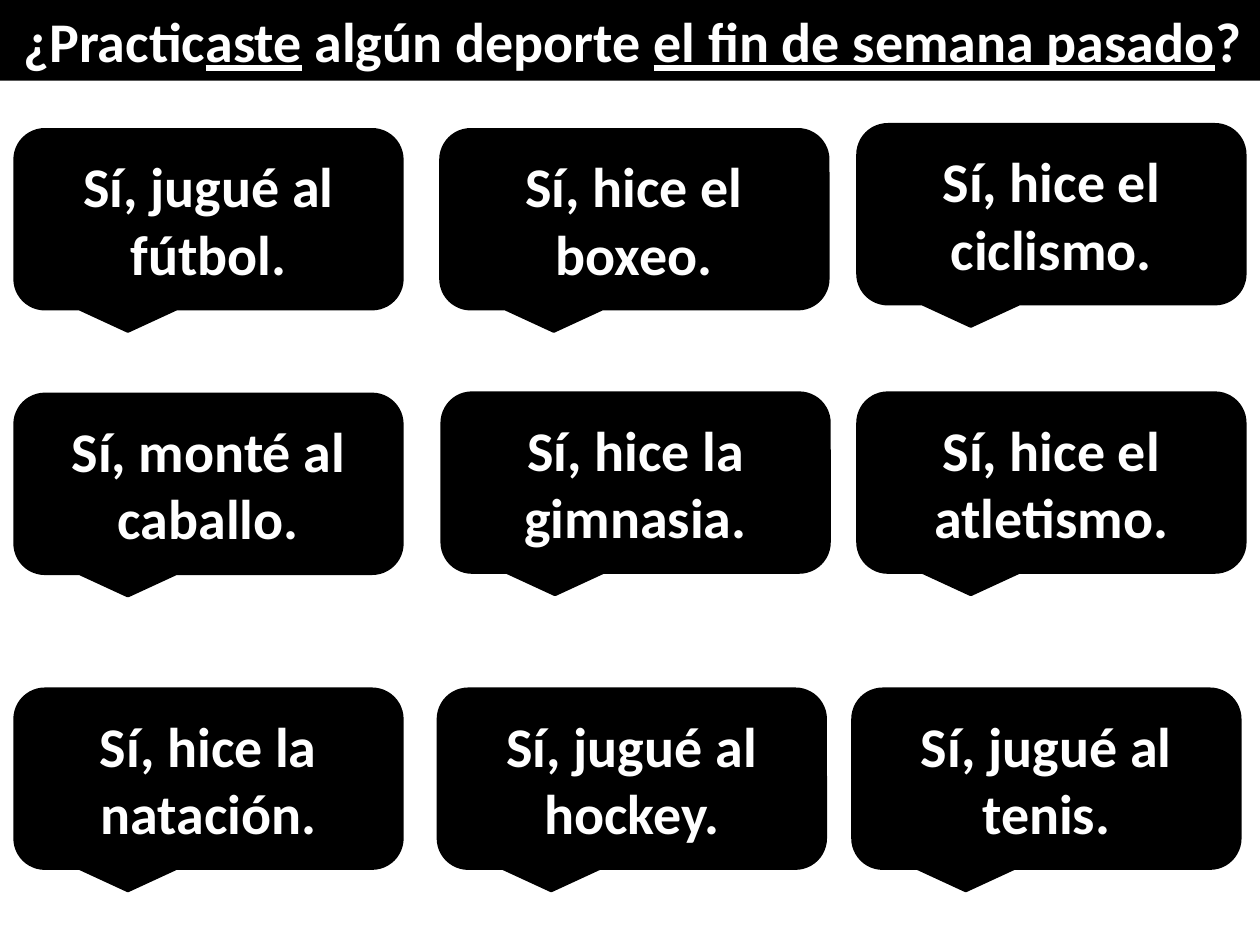
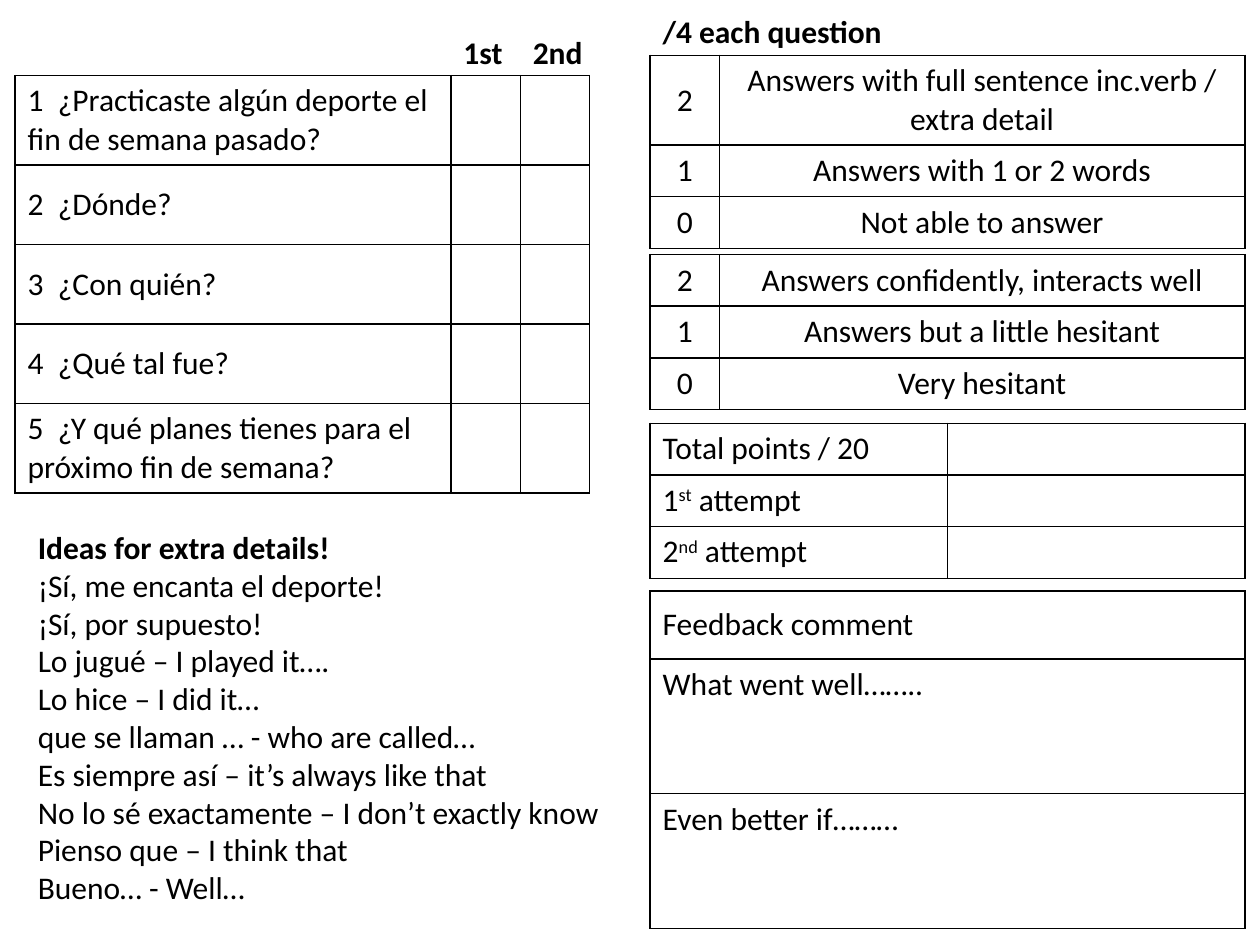
from lxml import etree
from pptx import Presentation
from pptx.dml.color import RGBColor
from pptx.enum.shapes import MSO_SHAPE
from pptx.enum.text import MSO_ANCHOR, MSO_AUTO_SIZE, PP_ALIGN
from pptx.oxml.ns import qn
from pptx.util import Inches, Pt

COLOURS = {"ink": "000000", "paper": "FFFFFF"}
FONT = "Calibri"
CALLOUT = MSO_SHAPE.ROUNDED_RECTANGULAR_CALLOUT
TOP, MIDDLE = MSO_ANCHOR.TOP, MSO_ANCHOR.MIDDLE
LEFT, CENTER = PP_ALIGN.LEFT, PP_ALIGN.CENTER
NO_AUTOFIT = MSO_AUTO_SIZE.NONE
TITLE_ONLY, TITLE_AND_CONTENT = 5, 1

HEADLINE = {"size": Pt(32), "bold": True}
BODY = {"size": Pt(18), "bold": False}
LABEL = {"size": Pt(18), "bold": True}
UNDERLINED = {"underline": True}
SUPERSCRIPT = {"baseline": "30000"}

QUESTION = [("¿Practic", {}), ("aste", UNDERLINED), (" algún deporte ", {}),
            ("el fin de semana pasado", UNDERLINED), ("?", {})]
CALLOUT_SIZE = (3.07, 1.42)
ANSWERS = [
    (0.12, 1.03, "Sí, jugué al fútbol."),
    (3.5, 1.03, "Sí, hice el boxeo."),
    (6.81, 0.99, "Sí, hice el ciclismo."),
    (0.12, 3.13, "Sí, monté al caballo."),
    (3.51, 3.12, "Sí, hice la gimnasia."),
    (6.81, 3.12, "Sí, hice el atletismo."),
    (0.12, 5.47, "Sí, hice la natación."),
    (3.48, 5.47, "Sí, jugué al hockey."),
    (6.77, 5.47, "Sí, jugué al tenis."),
]

QUESTIONS = [
    "1  ¿Practicaste algún deporte el fin de semana pasado?",
    "2  ¿Dónde?",
    "3  ¿Con quién?",
    "4  ¿Qué tal fue?",
    "5  ¿Y qué planes tienes para el próximo fin de semana?",
]
CONTENT_MARKS = [
    ("2", "Answers with full sentence inc.verb / extra detail"),
    ("1", "Answers with 1 or 2 words"),
    ("0", "Not able to answer"),
]
FLUENCY_MARKS = [
    ("2", "Answers confidently, interacts well"),
    ("1", "Answers but a little hesitant"),
    ("0", "Very hesitant"),
]
TOTALS = [
    ("Total points / 20", ""),
    ([("1", {}), ("st", SUPERSCRIPT), (" attempt", {})], ""),
    ([("2", {}), ("nd", SUPERSCRIPT), (" attempt", {})], ""),
]
FEEDBACK = ["Feedback comment", "What went well……..", "Even better if………"]
IDEAS_HEADING = "Ideas for extra details!"
IDEAS = [
    "¡Sí, me encanta el deporte!",
    "¡Sí, por supuesto!",
    "Lo jugué – I played it….",
    "Lo hice – I did it…",
    "que se llaman … - who are called…",
    "Es siempre así – it’s always like that",
    "No lo sé exactamente – I don’t exactly know",
    "Pienso que – I think that",
    "Bueno… - Well…",
]


def colour(name):
    return RGBColor.from_string(COLOURS[name])


def set_values(target, values):
    for name, value in values.items():
        setattr(target, name, value)


def write(paragraph, content, style, colour_name="ink", align=LEFT):
    """Fill a paragraph from a string or from (text, format) pairs."""
    paragraph.alignment = align
    runs = [(content, {})] if isinstance(content, str) else content
    for text, extra in runs:
        values = {"name": FONT, **style, **extra}
        baseline = values.pop("baseline", None)
        run = paragraph.add_run()
        run.text = text
        set_values(run.font, values)
        run.font.color.rgb = colour(colour_name)
        if baseline:
            run._r.get_or_add_rPr().set("baseline", baseline)


def place(shape, box):
    names = ("left", "top", "width", "height")
    set_values(shape, dict(zip(names, map(Inches, box))))


def set_frame(shape, anchor):
    set_values(shape.text_frame, {"word_wrap": True, "auto_size": NO_AUTOFIT,
                                  "vertical_anchor": anchor})


def fill(target, colour_name):
    target.fill.solid()
    target.fill.fore_color.rgb = colour(colour_name)


def add_question_band(slide, box):
    title = slide.shapes.title
    place(title, box)
    fill(title, "ink")
    set_frame(title, TOP)
    write(title.text_frame.paragraphs[0], QUESTION, HEADLINE, "paper", CENTER)


def add_callout(slide, box, answer):
    callout = slide.shapes.add_shape(CALLOUT, *map(Inches, box))
    callout.shadow.inherit = False
    fill(callout, "ink")
    callout.line.color.rgb = colour("ink")
    callout.line.width = Pt(2)
    set_frame(callout, MIDDLE)
    write(callout.text_frame.paragraphs[0], answer, HEADLINE, "paper", CENTER)


def add_label(slide, box, text):
    label = slide.shapes.add_textbox(*map(Inches, box))
    set_frame(label, TOP)
    write(label.text_frame.paragraphs[0], text, LABEL)


def add_borders(cell):
    properties = cell._tc.get_or_add_tcPr()
    for position, side in enumerate(("lnL", "lnR", "lnT", "lnB")):
        line = etree.Element(qn(f"a:{side}"), w=str(Pt(1)))
        solid = etree.SubElement(line, qn("a:solidFill"))
        etree.SubElement(solid, qn("a:srgbClr"), val=COLOURS["ink"])
        properties.insert(position, line)


def add_grid(slide, position, widths, heights, rows, align=LEFT, anchors=None):
    """Add a ruled table; anchors holds one vertical anchor per row."""
    left, top = position
    box = (left, top, sum(widths), sum(heights))
    frame = slide.shapes.add_table(len(heights), len(widths), *map(Inches, box))
    table = frame.table
    set_values(table, {"first_row": False, "horz_banding": False})
    for column, width in zip(table.columns, widths):
        column.width = Inches(width)
    anchors = anchors or [MIDDLE] * len(rows)
    for row, height, contents, anchor in zip(table.rows, heights, rows, anchors):
        row.height = Inches(height)
        for cell, content in zip(row.cells, contents):
            fill(cell, "paper")
            add_borders(cell)
            cell.vertical_anchor = anchor
            if content:
                write(cell.text_frame.paragraphs[0], content, BODY, align=align)


def add_ideas(slide, box):
    ideas = slide.placeholders[1]
    place(ideas, box)
    set_frame(ideas, TOP)
    frame = ideas.text_frame
    for index, line in enumerate([IDEAS_HEADING, *IDEAS]):
        paragraph = frame.add_paragraph() if index else frame.paragraphs[0]
        write(paragraph, line, BODY if index else LABEL)
        paragraph.space_before = Pt(0)
        properties = paragraph._p.get_or_add_pPr()
        properties.set("marL", "0")
        properties.set("indent", "0")
        etree.SubElement(properties, qn("a:buNone"))


def add_question_sheet(slide, left, top):
    for offset, attempt in ((3.46, "1st"), (4.01, "2nd")):
        add_label(slide, (left + offset, top - 0.39, 0.79, 0.4), attempt)
    rows = [(question, "", "") for question in QUESTIONS]
    add_grid(slide, (left, top), [3.46, 0.55, 0.55], [0.63] * 5, rows)


def add_mark_scheme(slide, left, top):
    add_label(slide, (left, top, 3.39, 0.4), "/4 each question")
    for offset, marks in ((0.39, CONTENT_MARKS), (1.97, FLUENCY_MARKS)):
        add_grid(slide, (left, top + offset), [0.55, 4.17], [0.41] * 3,
                 marks, CENTER)


def add_results(slide, left, top):
    add_grid(slide, (left, top), [2.36, 2.36], [0.41] * 3, TOTALS,
             anchors=[TOP] * 3)
    add_grid(slide, (left, top + 1.33), [4.72], [0.54, 1.07, 1.07],
             [(comment,) for comment in FEEDBACK], anchors=[MIDDLE, TOP, TOP])


def build_answers_slide(presentation):
    slide = presentation.slides.add_slide(presentation.slide_layouts[TITLE_ONLY])
    add_question_band(slide, (0, 0, 10.04, 0.64))
    for left, top, answer in ANSWERS:
        add_callout(slide, (left, top, *CALLOUT_SIZE), answer)


def build_assessment_slide(presentation):
    layout = presentation.slide_layouts[TITLE_AND_CONTENT]
    slide = presentation.slides.add_slide(layout)
    title = slide.shapes.title._element
    title.getparent().remove(title)
    add_question_sheet(slide, 0.12, 0.6)
    add_ideas(slide, (0.2, 4.14, 4.72, 3.3))
    add_mark_scheme(slide, 5.16, 0.05)
    add_results(slide, 5.16, 3.36)


def main():
    presentation = Presentation()
    presentation.slide_width = Inches(10)
    presentation.slide_height = Inches(7.5)
    build_answers_slide(presentation)
    build_assessment_slide(presentation)
    presentation.save("out.pptx")


if __name__ == "__main__":
    main()
